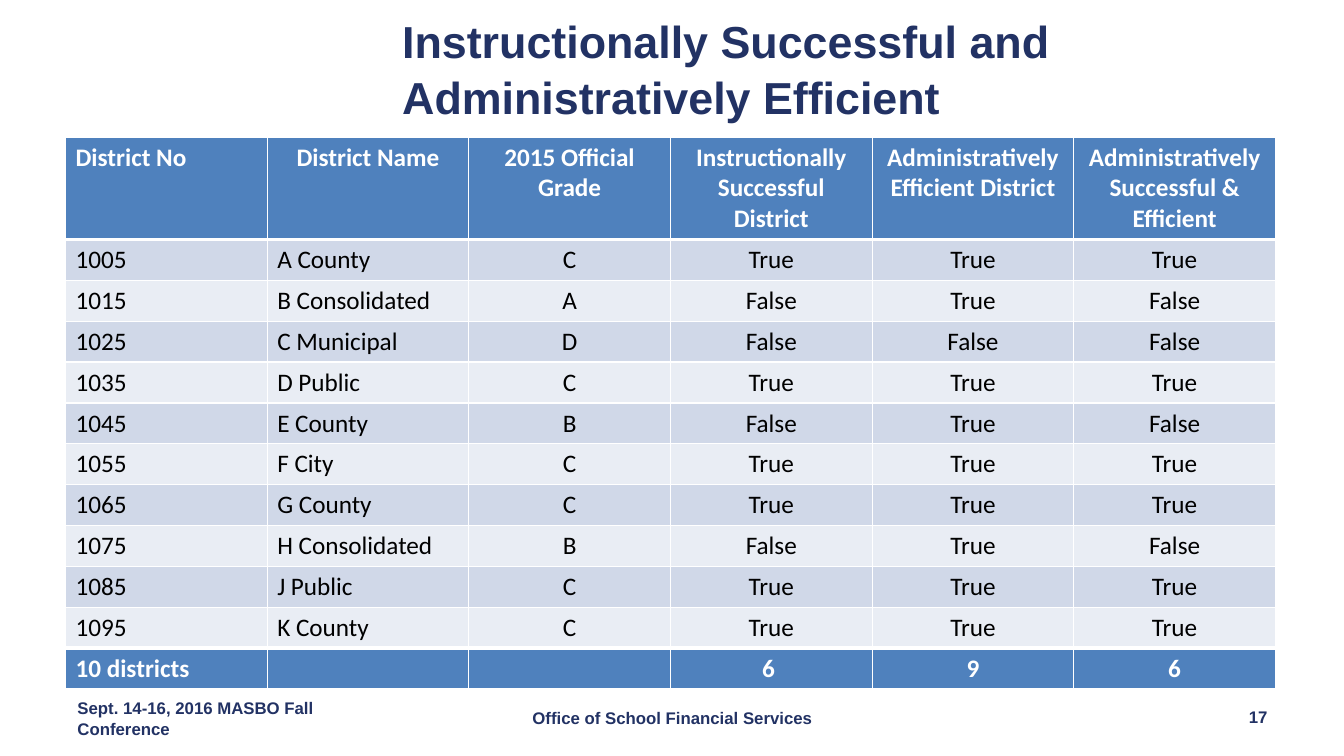
"""Build the district efficiency table slide."""
from dataclasses import dataclass

from lxml.etree import SubElement
from pptx import Presentation
from pptx.dml.color import RGBColor
from pptx.enum.text import MSO_ANCHOR, PP_ALIGN
from pptx.oxml.ns import qn
from pptx.util import Inches, Pt

TITLE = "Instructionally Successful and Administratively Efficient"
HEADINGS = (
    "District No",
    "District Name",
    "2015 Official Grade",
    "Instructionally Successful District",
    "Administratively Efficient District",
    "Administratively Successful & Efficient",
)
DISTRICTS = [
    ("1005", "A County", "C", "True", "True", "True"),
    ("1015", "B Consolidated", "A", "False", "True", "False"),
    ("1025", "C Municipal", "D", "False", "False", "False"),
    ("1035", "D Public", "C", "True", "True", "True"),
    ("1045", "E County", "B", "False", "True", "False"),
    ("1055", "F City", "C", "True", "True", "True"),
    ("1065", "G County", "C", "True", "True", "True"),
    ("1075", "H Consolidated", "B", "False", "True", "False"),
    ("1085", "J Public", "C", "True", "True", "True"),
    ("1095", "K County", "C", "True", "True", "True"),
]
TOTALS = ("10 districts", "", "", "6 ", "9", "6")
FOOTERS = [
    ("Sept. 14-16, 2016 MASBO Fall Conference", (0.67, 6.85, 3.11, 0.55), PP_ALIGN.LEFT),
    ("Office of School Financial Services", (4.56, 6.85, 4.22, 0.55), PP_ALIGN.CENTER),
    ("17", (9.56, 6.84, 3.11, 0.55), PP_ALIGN.RIGHT),
]


@dataclass(frozen=True)
class Theme:
    navy: str = "223264"
    blue: str = "4F81BD"
    bands: tuple = ("D0D8E8", "E9EDF4")
    white: str = "FFFFFF"
    black: str = "000000"
    heading_font: str = "Arial"
    table_font: str = "Calibri"
    title_size: int = 32
    table_size: int = 18
    footer_size: int = 12
    thin: int = 1
    thick: int = 3


THEME = Theme()


def style(paragraph, font_name, size, color, bold, align):
    paragraph.alignment = align
    for run in paragraph.runs:
        run.font.name = font_name
        run.font.size = Pt(size)
        run.font.bold = bold
        run.font.color.rgb = RGBColor.from_string(color)


def add_label(slide, text, place, size, align, anchor):
    frame = slide.shapes.add_textbox(*map(Inches, place)).text_frame
    frame.word_wrap = True
    frame.vertical_anchor = anchor
    frame.text = text
    label = frame.paragraphs[0]
    style(label, THEME.heading_font, size, THEME.navy, True, align)
    return label


def add_borders(cell, top, bottom):
    properties = cell._tc.get_or_add_tcPr()
    for side, width in (("L", THEME.thin), ("R", THEME.thin), ("T", top), ("B", bottom)):
        line = SubElement(properties, qn(f"a:ln{side}"), w=str(Pt(width)))
        SubElement(SubElement(line, qn("a:solidFill")), qn("a:srgbClr"), val=THEME.white)


def add_district_table(slide):
    records = [HEADINGS, *DISTRICTS, TOTALS]
    last = len(records) - 1
    table = slide.shapes.add_table(
        len(records), len(HEADINGS), Inches(0.65), Inches(1.36), Inches(12), Inches(5.46)
    ).table
    table.horz_banding = False
    heading_height = Inches(1.01)
    for row, record in enumerate(records):
        table.rows[row].height = heading_height if row == 0 else (Inches(5.46) - heading_height) // last
        strong = row in (0, last)
        fill = THEME.blue if strong else THEME.bands[(row - 1) % 2]
        top = THEME.thick if row in (1, last) else THEME.thin
        bottom = THEME.thick if row in (0, last - 1) else THEME.thin
        for column, value in enumerate(record):
            cell = table.cell(row, column)
            add_borders(cell, top, bottom)
            cell.fill.solid()
            cell.fill.fore_color.rgb = RGBColor.from_string(fill)
            cell.text_frame.text = value
            left = column == 0 or (column == 1 and row > 0)
            style(
                cell.text_frame.paragraphs[0], THEME.table_font, THEME.table_size,
                THEME.white if strong else THEME.black, strong,
                PP_ALIGN.LEFT if left else PP_ALIGN.CENTER,
            )


def main():
    deck = Presentation()
    deck.slide_width, deck.slide_height = Inches(13.33), Inches(7.5)
    slide = deck.slides.add_slide(deck.slide_layouts[6])
    add_district_table(slide)
    title = add_label(
        slide, TITLE, (3.89, 0.06, 7.08, 1.17), THEME.title_size, PP_ALIGN.LEFT, MSO_ANCHOR.TOP
    )
    title.line_spacing = 1.05
    for text, place, align in FOOTERS:
        add_label(slide, text, place, THEME.footer_size, align, MSO_ANCHOR.MIDDLE)
    deck.save("out.pptx")


if __name__ == "__main__":
    main()
